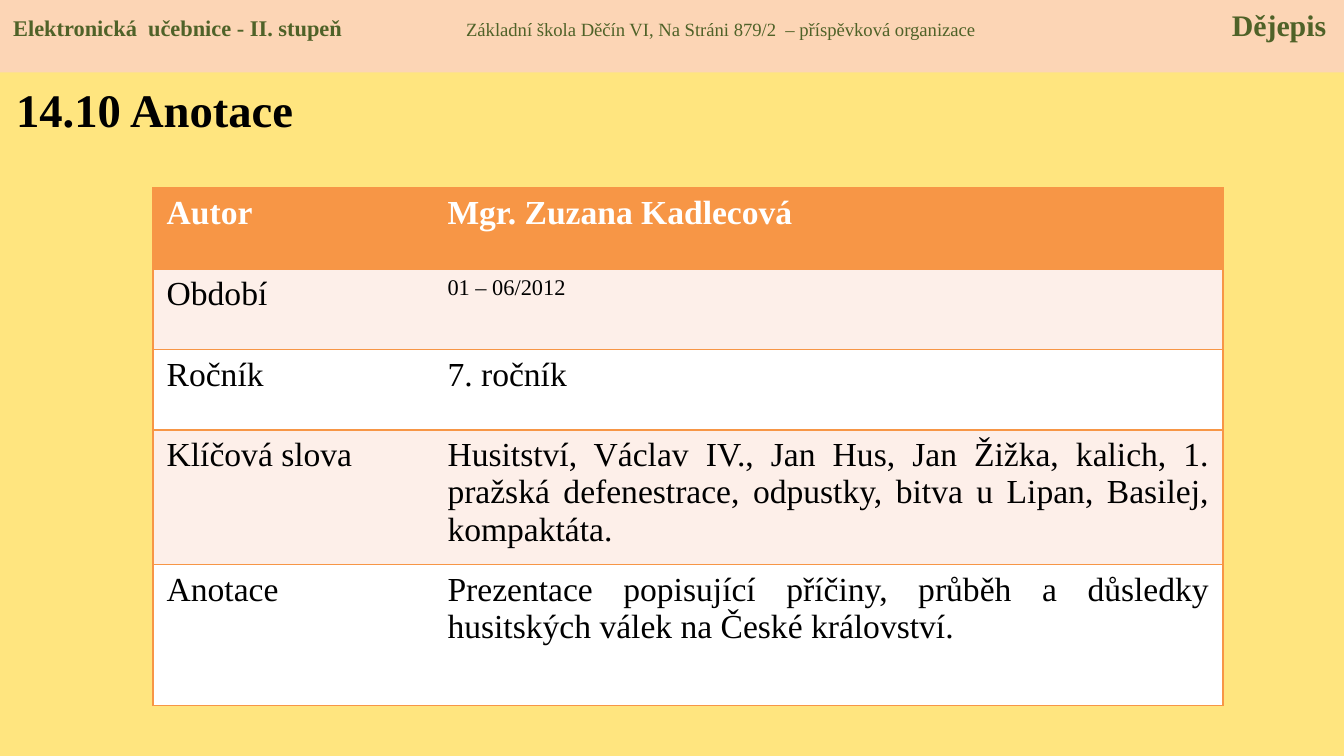
from lxml import etree
from pptx import Presentation
from pptx.dml.color import RGBColor
from pptx.enum.shapes import MSO_SHAPE
from pptx.enum.text import MSO_ANCHOR, MSO_AUTO_SIZE, PP_ALIGN
from pptx.oxml.ns import qn
from pptx.util import Inches, Pt

RECTANGLE = MSO_SHAPE.RECTANGLE
TOP = MSO_ANCHOR.TOP
NO_AUTOFIT = MSO_AUTO_SIZE.NONE
LEFT, JUSTIFY = PP_ALIGN.LEFT, PP_ALIGN.JUSTIFY

FONT = "Times New Roman"
BACKGROUND, BANNER_FILL, GREEN = "FFE57F", "FCD5B5", "4F6228"
ORANGE, PINK, WHITE, BLACK = "F79646", "FDEFE9", "FFFFFF", "000000"

BANNER_RUNS = [
    ("Elektronická  učebnice - II. stupeň", 12, True),
    ("\tZákladní škola Děčín VI, Na Stráni 879/2  – příspěvková organizace", 10, False),
    ("\tDějepis", 16, True),
]
BANNER_TABS = [(3.37, "l"), (9.77, "r")]
HEADING = "14.10 Anotace"
ANNOTATION = [
    ("Autor", "Mgr. Zuzana Kadlecová", 18, LEFT),
    ("Období", "01 – 06/2012", 12, LEFT),
    ("Ročník", "7. ročník", 18, LEFT),
    ("Klíčová slova", "Husitství, Václav IV., Jan Hus, Jan Žižka, kalich, 1. pražská "
     "defenestrace, odpustky, bitva u Lipan, Basilej, kompaktáta.", 18, JUSTIFY),
    ("Anotace", "Prezentace popisující příčiny, průběh a důsledky husitských válek "
     "na České království.", 18, JUSTIFY),
]
COLUMN_WIDTHS = [2.09, 5.87]
ROW_HEIGHTS = [0.6, 0.6, 0.6, 1, 1.05]


def paint(fill, color):
    fill.solid()
    fill.fore_color.rgb = RGBColor.from_string(color)


def add_run(paragraph, text, size, color, bold=False):
    run = paragraph.add_run()
    run.text = text
    run.font.name = FONT
    run.font.size = Pt(size)
    run.font.bold = bold
    paint(run.font.fill, color)


def add_tabs(paragraph, tabs):
    properties = paragraph._p.get_or_add_pPr()
    tab_list = etree.SubElement(properties, qn("a:tabLst"))
    for position, alignment in tabs:
        etree.SubElement(tab_list, qn("a:tab"), pos=str(Inches(position)), algn=alignment)


def add_borders(cell, open_side):
    properties = cell._tc.get_or_add_tcPr()
    for side in "LRTB":
        line = etree.SubElement(properties, qn(f"a:ln{side}"), w=str(Pt(1)))
        if side == open_side:
            etree.SubElement(line, qn("a:noFill"))
        else:
            fill = etree.SubElement(line, qn("a:solidFill"))
            etree.SubElement(fill, qn("a:srgbClr"), val=ORANGE)


def add_banner(slide):
    banner = slide.shapes.add_shape(RECTANGLE, 0, 0, Inches(10), Inches(0.54))
    banner.shadow.inherit = False
    paint(banner.fill, BANNER_FILL)
    banner.line.fill.background()
    banner.text_frame.vertical_anchor = TOP
    banner.text_frame.word_wrap = True
    paragraph = banner.text_frame.paragraphs[0]
    paragraph.alignment = LEFT
    add_tabs(paragraph, BANNER_TABS)
    for text, size, bold in BANNER_RUNS:
        add_run(paragraph, text, size, GREEN, bold)


def add_heading(slide):
    heading = slide.shapes.title
    heading.left, heading.top = Inches(0.02), Inches(0.55)
    heading.width, heading.height = Inches(4.19), Inches(0.65)
    frame = heading.text_frame
    frame.auto_size = NO_AUTOFIT
    frame.vertical_anchor = TOP
    frame.margin_top = Inches(0.05)
    frame.paragraphs[0].alignment = LEFT
    add_run(frame.paragraphs[0], HEADING, 25, BLACK, True)


def add_annotation(slide):
    table = slide.shapes.add_table(
        len(ANNOTATION), len(COLUMN_WIDTHS), Inches(1.14), Inches(1.4),
        Inches(sum(COLUMN_WIDTHS)), Inches(sum(ROW_HEIGHTS))).table
    for column, width in zip(table.columns, COLUMN_WIDTHS):
        column.width = Inches(width)
    for index, (label, value, size, alignment) in enumerate(ANNOTATION):
        table.rows[index].height = Inches(ROW_HEIGHTS[index])
        header = index == 0
        row_fill = ORANGE if header else (WHITE, PINK)[index % 2]
        entries = [(label, 18, LEFT, "R"), (value, size, alignment, "L")]
        for cell, (text, points, align, open_side) in zip(table.rows[index].cells, entries):
            add_borders(cell, open_side)
            paint(cell.fill, row_fill)
            paragraph = cell.text_frame.paragraphs[0]
            paragraph.alignment = align
            add_run(paragraph, text, points, WHITE if header else BLACK, header)


def main():
    """Build the annotation slide of the history textbook."""
    deck = Presentation()
    deck.slide_width, deck.slide_height = Inches(10), Inches(5.625)
    slide = deck.slides.add_slide(deck.slide_layouts[5])
    paint(slide.background.fill, BACKGROUND)
    add_banner(slide)
    add_heading(slide)
    add_annotation(slide)
    deck.save("out.pptx")


if __name__ == "__main__":
    main()
